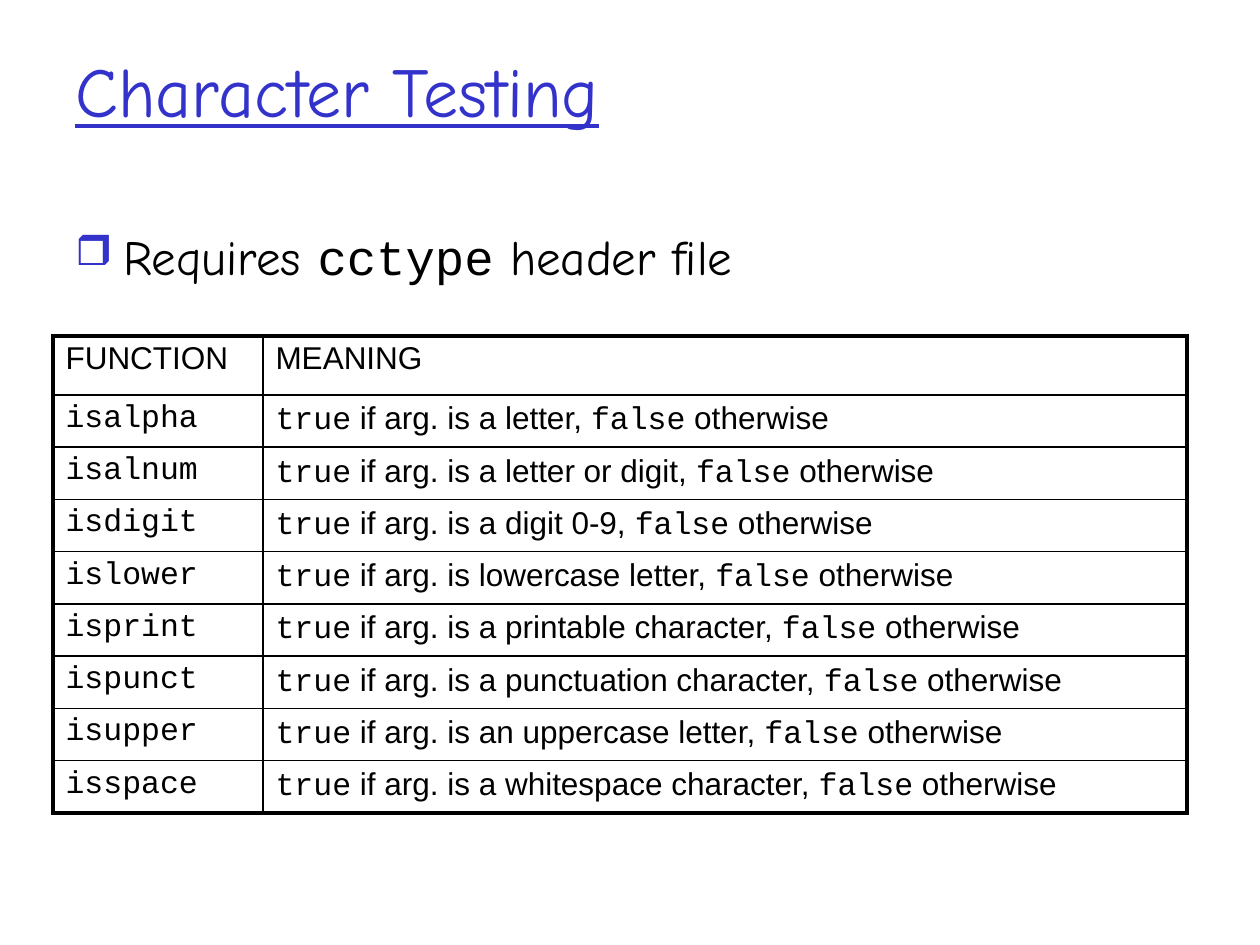
from lxml.etree import SubElement
from pptx import Presentation
from pptx.dml.color import RGBColor
from pptx.enum.text import MSO_ANCHOR as Anchor
from pptx.oxml.ns import qn
from pptx.util import Emu, Pt

TITLE = "Character Testing"
NOTE = [("Requires ", "hand"), ("cctype", "code"), (" header file", "hand")]
HEADER = ("FUNCTION", "MEANING")
FUNCTIONS = [
    ("isalpha", "is a letter"),
    ("isalnum", "is a letter or digit"),
    ("isdigit", "is a digit 0-9"),
    ("islower", "is lowercase letter"),
    ("isprint", "is a printable character"),
    ("ispunct", "is a punctuation character"),
    ("isupper", "is an uppercase letter"),
    ("isspace", "is a whitespace character"),
]
FONTS = {"hand": "Comic Neue", "code": "Courier New", "plain": "Arial"}
COLORS = {"accent": "3333CC", "ink": "000000"}
THICK, THIN = 2.25, 1

TABLE_X, TABLE_Y, TABLE_H = 53, 336, 477
COL_WIDTHS = (210, 924)
HEADER_H = 59


def px(n):
    return Emu(round(n * 914400 / 126))


def write(tf, runs, size, color="ink", underline=None, spacing=None):
    p = tf.paragraphs[0]
    p.line_spacing = spacing
    for text, font in runs:
        r = p.add_run()
        r.text = text
        r.font.name = FONTS[font]
        r.font.size = Pt(size)
        r.font.underline = underline
        r.font.color.rgb = RGBColor.from_string(COLORS[color])
    return p


def add_box(s, x, y, w, h, anchor):
    tf = s.shapes.add_textbox(px(x), px(y), px(w), px(h)).text_frame
    tf.word_wrap = True
    tf.vertical_anchor = anchor
    return tf


def add_bullet(p, char, indent, color, percent):
    pPr = p._p.get_or_add_pPr()
    pPr.set("marL", str(px(indent)))
    pPr.set("indent", str(-px(indent)))
    before = SubElement(pPr, qn("a:spcBef"))
    SubElement(before, qn("a:spcPct"), val="20000")
    bu_color = SubElement(pPr, qn("a:buClr"))
    SubElement(bu_color, qn("a:srgbClr"), val=COLORS[color])
    SubElement(pPr, qn("a:buSzPct"), val=str(percent * 1000))
    SubElement(pPr, qn("a:buChar"), char=char)


def set_borders(cell, outer):
    tcPr = cell._tc.get_or_add_tcPr()
    for side in "LRTB":
        width = THICK if side in outer else THIN
        ln = SubElement(tcPr, qn(f"a:ln{side}"), w=str(Pt(width)))
        fill = SubElement(ln, qn("a:solidFill"))
        SubElement(fill, qn("a:srgbClr"), val=COLORS["ink"])


def add_function_table(s):
    rows = [[[(text, "plain")] for text in HEADER]]
    for name, test in FUNCTIONS:
        meaning = [("true", "code"), (f" if arg. {test}, ", "plain"),
                   ("false", "code"), (" otherwise", "plain")]
        rows.append([[(name, "code")], meaning])
    last = len(rows) - 1
    table = s.shapes.add_table(len(rows), len(COL_WIDTHS), px(TABLE_X), px(TABLE_Y),
                               px(sum(COL_WIDTHS)), px(TABLE_H)).table
    table.first_row = table.horz_banding = False
    for col, width in zip(table.columns, COL_WIDTHS):
        col.width = px(width)
    for i, row in enumerate(rows):
        table.rows[i].height = px(HEADER_H if i == 0 else (TABLE_H - HEADER_H) / last)
        for j, runs in enumerate(row):
            cell = table.cell(i, j)
            write(cell.text_frame, runs, 18, spacing=0.95)
            outer = "LR"[j] + ("T" if i == 0 else "B" if i == last else "")
            set_borders(cell, outer)
            cell.fill.background()


def main():
    prs = Presentation()
    prs.slide_width, prs.slide_height = px(1260), px(945)
    s = prs.slides.add_slide(prs.slide_layouts[6])
    write(add_box(s, 63, 10, 1050, 158, Anchor.MIDDLE), [(TITLE, "hand")], 40,
          color="accent", underline=True)
    p = write(add_box(s, 63, 220, 1089, 74, Anchor.TOP), NOTE, 28)
    add_bullet(p, "❒", 48, "accent", 85)
    add_function_table(s)
    prs.save("out.pptx")


if __name__ == "__main__":
    main()
